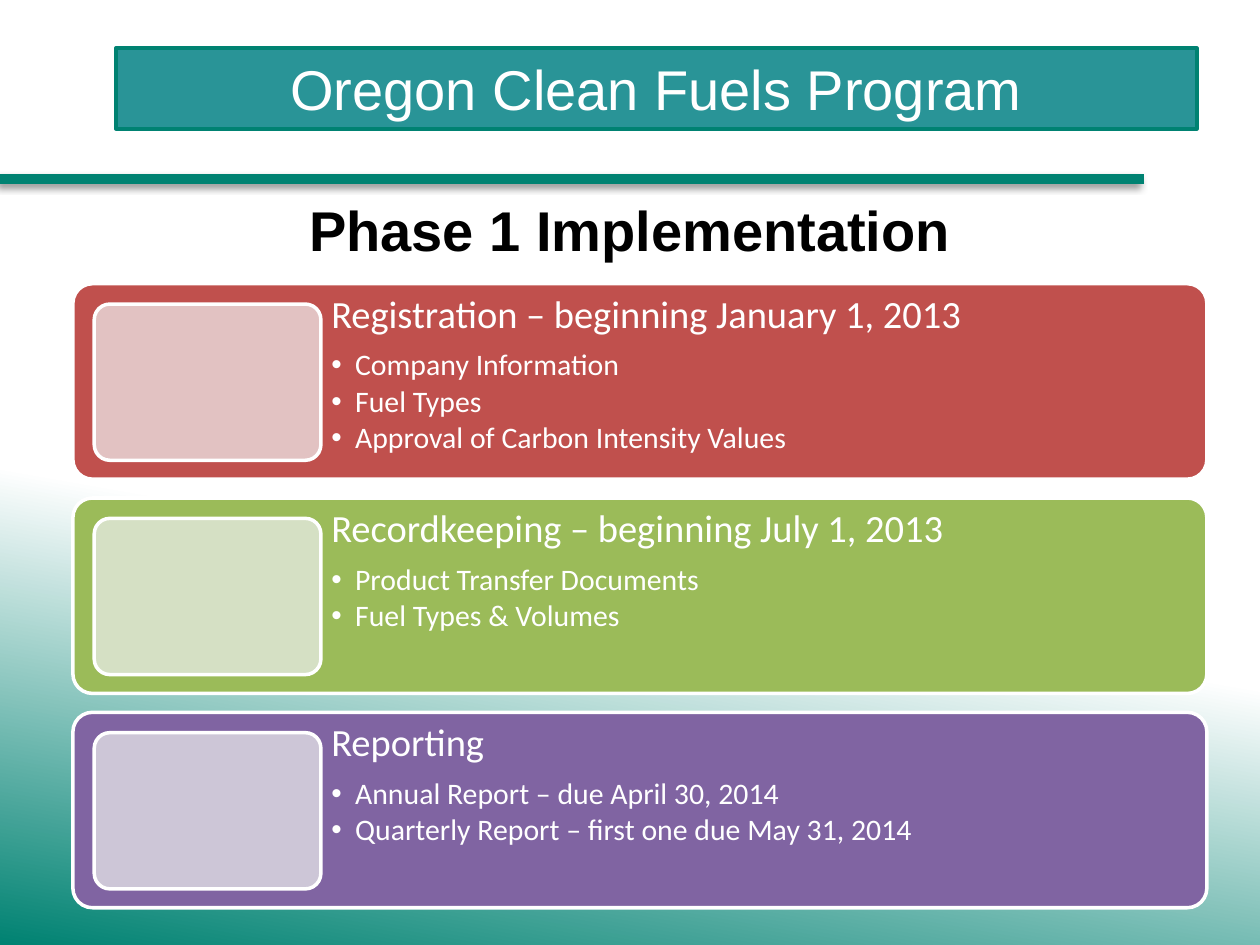
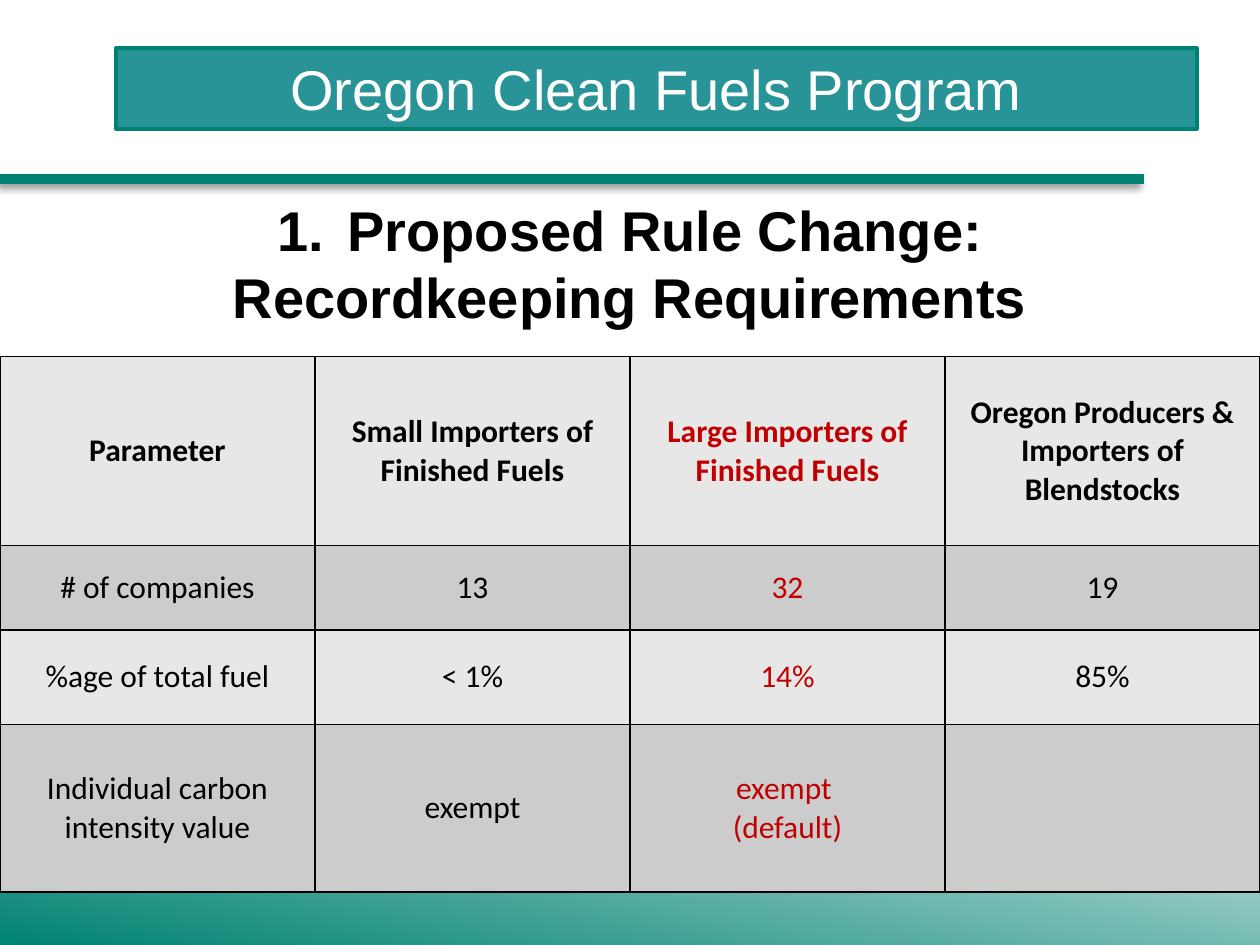
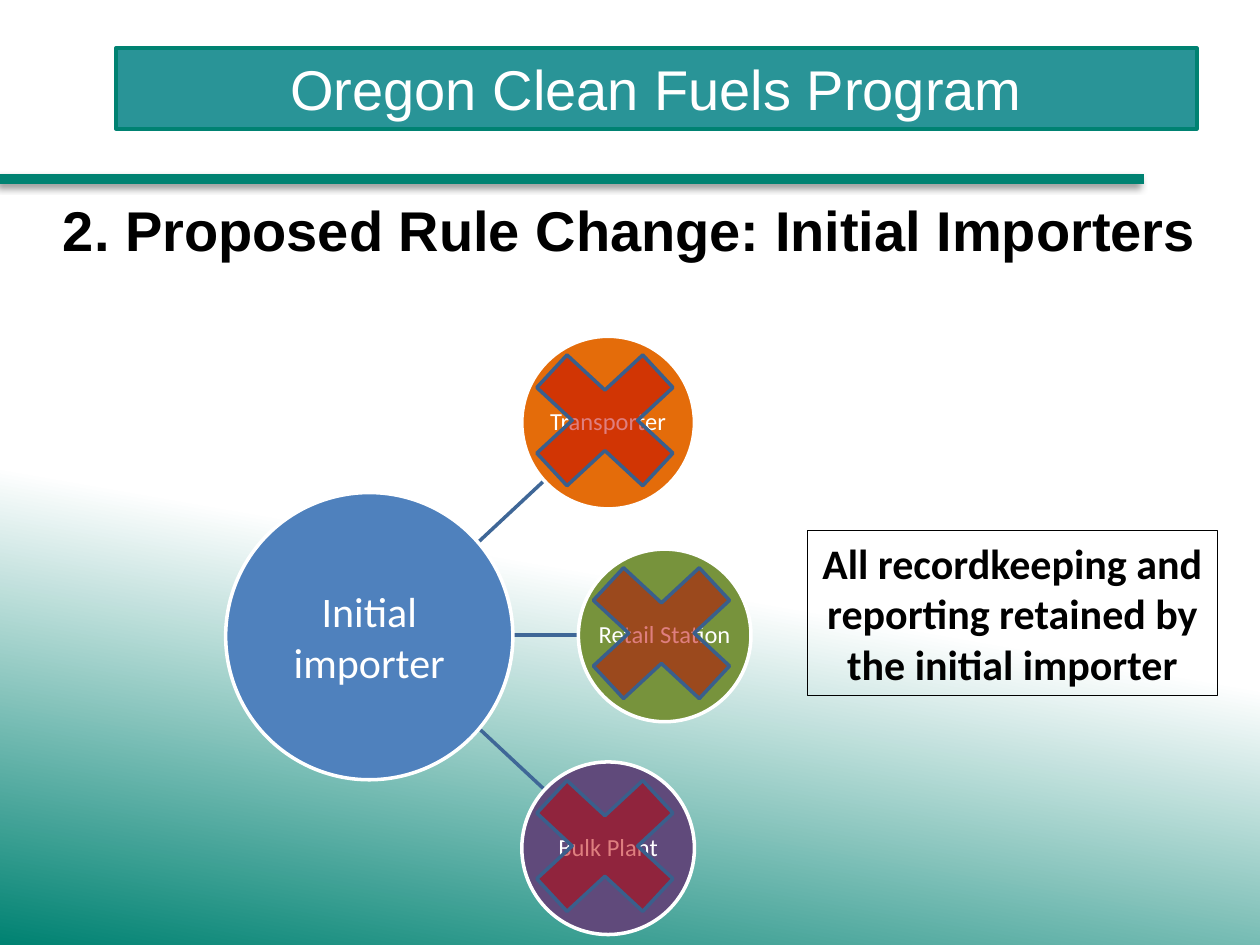
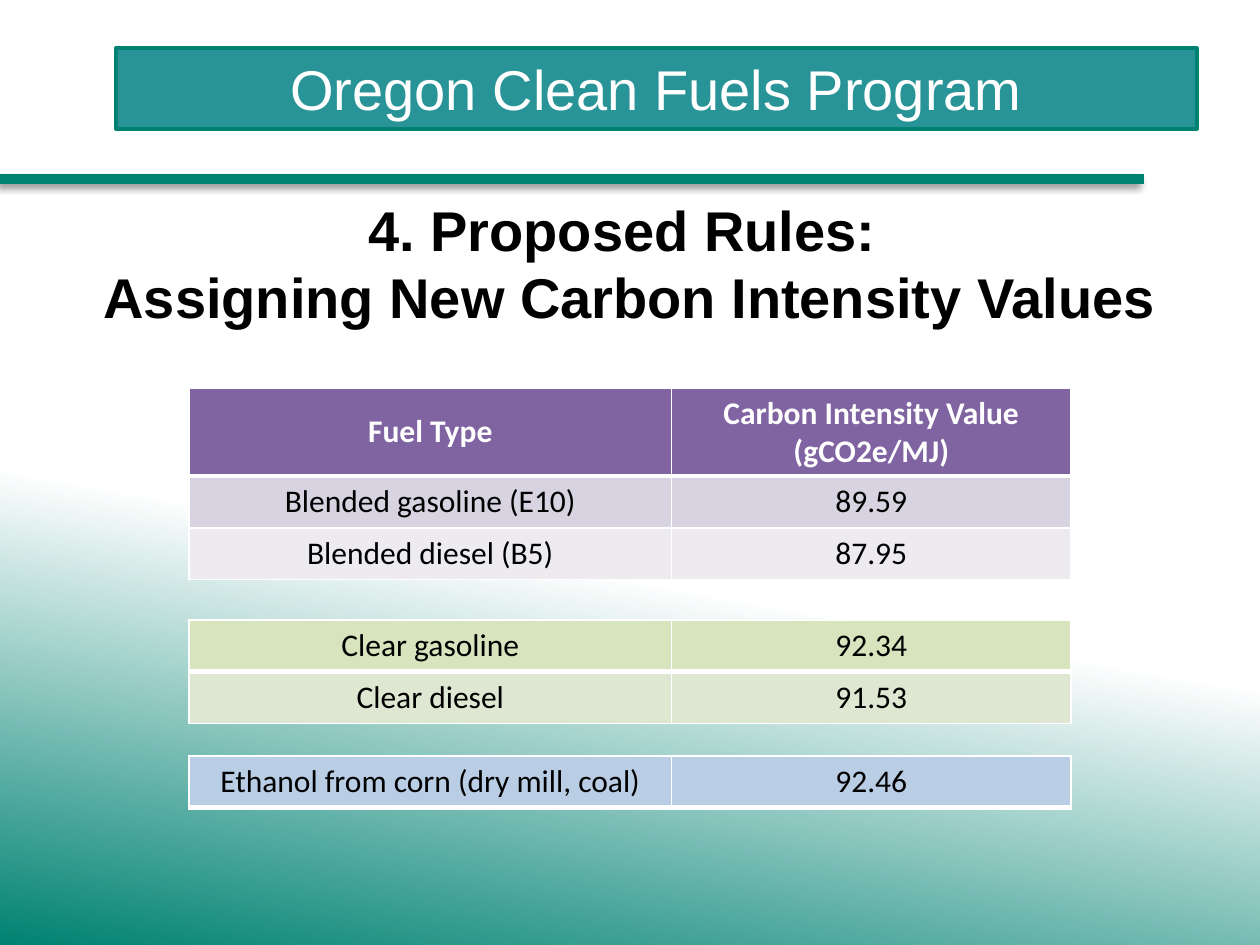
"""Build the four slides on the Oregon Clean Fuels Program."""
from lxml import etree
from pptx import Presentation
from pptx.dml.color import RGBColor
from pptx.enum.shapes import MSO_CONNECTOR, MSO_SHAPE
from pptx.enum.text import MSO_ANCHOR, PP_ALIGN
from pptx.oxml.ns import qn
from pptx.util import Cm, Pt

RECT = MSO_SHAPE.RECTANGLE
ROUNDED = MSO_SHAPE.ROUNDED_RECTANGLE
CIRCLE = MSO_SHAPE.OVAL
CROSS = MSO_SHAPE.MATH_MULTIPLY
STRAIGHT = MSO_CONNECTOR.STRAIGHT
LEFT, CENTER = PP_ALIGN.LEFT, PP_ALIGN.CENTER
TOP, MIDDLE = MSO_ANCHOR.TOP, MSO_ANCHOR.MIDDLE

SLIDE_W, SLIDE_H = 25.4, 19.05
WHITE, BLACK, RED = "FFFFFF", "000000", "C00000"
TEAL, BAND_TEAL, PURPLE = "008272", "299497", "8064A2"
LIGHT_GREY, MID_GREY = "E7E7E7", "CCCCCC"
TITLE_FONT, BODY_FONT = "Arial", "Calibri"
TITLE_STYLE = dict(size=32, font=TITLE_FONT)

CARDS = [
    ("C0504D", "E2C2C2", "Registration – beginning January 1, 2013",
     ["Company Information", "Fuel Types", "Approval of Carbon Intensity Values"]),
    ("9BBB59", "D5E0C4", "Recordkeeping – beginning July 1, 2013",
     ["Product Transfer Documents", "Fuel Types & Volumes"]),
    (PURPLE, "CDC6D7", "Reporting",
     ["Annual Report – due April 30, 2014",
      "Quarterly Report – first one due May 31, 2014"]),
]

IMPORTER_GROUPS = [
    (0, BLACK, [["Parameter", "Small Importers of Finished Fuels"],
                ["# of companies", "13"],
                ["%age of total fuel", "< 1%"],
                ["Individual carbon intensity value", "exempt"]]),
    (3, BLACK, [["Oregon Producers & Importers of Blendstocks"],
                ["19"], ["85%"], [""]]),
    (2, RED, [["Large Importers of Finished Fuels"],
              ["32"], ["14%"], ["exempt \n(default)"]]),
]

RECIPIENTS = [("Transporter", "E46C0A", 5.97), ("Retail Station", "77933C", 7.11),
              ("Bulk Plant", "604A7B", 5.97)]

FUEL_GROUPS = [
    (7.82, [1.75, 1.04, 1.04], [PURPLE, "D8D3E0", "EDEAF0"], True,
     [["Fuel Type", "Carbon Intensity Value\n(gCO2e/MJ)"],
      ["Blended gasoline (E10)", "89.59"],
      ["Blended diesel (B5)", "87.95"]]),
    (15.24, [1.04], ["B9CDE5"], False,
     [["Ethanol from corn (dry mill, coal)", "92.46"]]),
    (12.5, [1.04, 1.04], ["D7E4BD", "DEE7D1"], False,
     [["Clear gasoline", "92.34"], ["Clear diesel", "91.53"]]),
]


def rgb(value):
    """Turn a hex string into a colour."""
    return RGBColor.from_string(value)


def child(parent, tag, **attributes):
    """Append a DrawingML element and return it."""
    return etree.SubElement(parent, qn(tag), {k: str(v) for k, v in attributes.items()})


def set_alpha(element, percent):
    """Make the last plain colour inside an element translucent."""
    colour = list(element.iter(qn("a:srgbClr")))[-1]
    child(colour, "a:alpha", val=percent * 1000)


def write(frame, text, size=18, color=BLACK, bold=False, font=BODY_FONT, align=CENTER,
          spacing=None, after=None, bullet=None, indent=0):
    """Add text to a frame, one paragraph for each line."""
    for line in text.split("\n"):
        first = frame.paragraphs[0]
        paragraph = frame.add_paragraph() if first.runs else first
        paragraph.alignment = align
        if spacing:
            paragraph.line_spacing = spacing
        if after is not None:
            paragraph.space_after = Pt(after)
        properties = paragraph._p.get_or_add_pPr()
        if indent:
            properties.set("marL", str(Cm(indent)))
            properties.set("indent", str(-Cm(indent)))
        if bullet == "1.":
            child(properties, "a:buAutoNum", type="arabicPeriod")
        elif bullet:
            child(properties, "a:buFont", typeface=TITLE_FONT)
            child(properties, "a:buChar", char=bullet)
        run = paragraph.add_run()
        run.text = line
        run.font.name = font
        run.font.size = Pt(size)
        run.font.bold = bold
        run.font.color.rgb = rgb(color)


def add_frame(slide, left, top, width, height, margin=None):
    """Add a wrapping text box and return its frame."""
    frame = slide.shapes.add_textbox(Cm(left), Cm(top), Cm(width), Cm(height)).text_frame
    frame.word_wrap = True
    frame.vertical_anchor = TOP
    if margin is not None:
        set_margins(frame, margin)
    return frame


def set_margins(frame, margin):
    """Give a text frame the same margin on every side."""
    frame.margin_left = frame.margin_right = Cm(margin)
    frame.margin_top = frame.margin_bottom = Cm(margin)


def add_block(slide, kind, left, top, width, height, fill=None, line=WHITE, weight=2):
    """Add a flat preset shape."""
    block = slide.shapes.add_shape(kind, Cm(left), Cm(top), Cm(width), Cm(height))
    block.shadow.inherit = False
    if fill:
        block.fill.solid()
        block.fill.fore_color.rgb = rgb(fill)
    else:
        block.fill.background()
    block.line.color.rgb = rgb(line)
    block.line.width = Pt(weight)
    block.text_frame.word_wrap = True
    block.text_frame.vertical_anchor = MIDDLE
    return block


def add_rule(slide, x1, y1, x2, y2, color, weight):
    """Add a straight line and return its empty effect list."""
    rule = slide.shapes.add_connector(STRAIGHT, Cm(x1), Cm(y1), Cm(x2), Cm(y2))
    rule.line.color.rgb = rgb(color)
    rule.line.width = Pt(weight)
    return child(rule._element.spPr, "a:effectLst")


def add_grid(slide, left, top, widths, heights, rows):
    """Add a plain table and yield each cell with its row number and text."""
    table = slide.shapes.add_table(len(heights), len(widths), Cm(left), Cm(top),
                                   Cm(sum(widths)), Cm(sum(heights))).table
    table.first_row = table.horz_banding = False
    for column, width in zip(table.columns, widths):
        column.width = Cm(width)
    for number, (row, height, texts) in enumerate(zip(table.rows, heights, rows)):
        row.height = Cm(height)
        for cell, text in zip(row.cells, texts):
            yield cell, number, text


def fill_cell(cell, text, fill, border, top=1, bottom=1, **style):
    """Set the borders, the fill and the text of a cell."""
    properties = cell._tc.get_or_add_tcPr()
    for side, weight in zip("LRTB", (1, 1, top, bottom)):
        edge = child(properties, f"a:ln{side}", w=Pt(weight))
        child(child(edge, "a:solidFill"), "a:srgbClr", val=border)
    cell.fill.solid()
    cell.fill.fore_color.rgb = rgb(fill)
    cell.vertical_anchor = MIDDLE
    if text:
        write(cell.text_frame, text, **style)


def paint_background(master):
    """Give the master its white to teal gradient."""
    fill = master.background.fill
    fill.gradient()
    fill.gradient_angle = 260
    for stop, position, color in zip(fill.gradient_stops, (0.59, 1), (WHITE, TEAL)):
        stop.position = position
        stop.color.rgb = rgb(color)
    set_alpha(master._element.cSld.bg, 53)


def add_page(deck):
    """Add a blank slide with the program band and the rule below it."""
    slide = deck.slides.add_slide(deck.slide_layouts[6])
    effects = add_rule(slide, 0, 3.61, 23.06, 3.61, TEAL, 6)
    shadow = child(effects, "a:outerShdw", blurRad=Pt(4), dist=Pt(3), dir=135 * 60000,
                   rotWithShape=0)
    child(shadow, "a:srgbClr", val=BLACK)
    set_alpha(shadow, 40)
    band = add_block(slide, RECT, 2.34, 0.97, 21.79, 1.63, BAND_TEAL, TEAL)
    write(band.text_frame, "Oregon Clean Fuels Program", color=WHITE, **TITLE_STYLE)
    return slide


def add_heading(slide, height=1.63):
    """Add the heading box under the rule and return its frame."""
    return add_frame(slide, 0, 3.81, SLIDE_W, height)


def add_card(slide, left, top, fill, tint, title, points):
    """Draw one phase card with its tinted panel and bullets."""
    height = 3.94
    card = add_block(slide, ROUNDED, left, top, 22.86, height, fill)
    style = dict(color=WHITE, align=LEFT, spacing=0.9)
    frame = add_frame(slide, left + 4.98, top, 17.91, height, margin=0.23)
    write(frame, title, size=22, after=7.7, **style)
    write(frame, "\n".join(points), size=17, after=2.5, bullet="•", indent=0.48, **style)
    panel = add_block(slide, ROUNDED, left + 0.43, top + 0.41, 4.57, 3.15, tint)
    card.adjustments[0] = panel.adjustments[0] = 0.1


def build_phases(deck):
    """Build the slide of implementation phases."""
    slide = add_page(deck)
    for number, card in enumerate(CARDS):
        add_card(slide, 1.47, 5.72 + 4.32 * number, *card)
    write(add_heading(slide), "Phase 1 Implementation", bold=True, **TITLE_STYLE)


def build_recordkeeping(deck):
    """Build the slide that compares groups of importers."""
    slide = add_page(deck)
    heading = add_heading(slide, 3)
    style = dict(bold=True, indent=1.42, **TITLE_STYLE)
    write(heading, "Proposed Rule Change:", bullet="1.", **style)
    write(heading, "Recordkeeping Requirements", **style)
    column = SLIDE_W / 4
    for position, color, rows in IMPORTER_GROUPS:
        grid = add_grid(slide, position * column, 7.19, [column] * len(rows[0]),
                        [3.81, 1.7, 1.9, 3.38], rows)
        for cell, number, text in grid:
            fill_cell(cell, text, (LIGHT_GREY, MID_GREY)[number % 2], BLACK,
                      color=color, bold=number == 0)


def add_importer_diagram(slide, left, top):
    """Draw the importer hub, its recipients and the crosses over them."""
    middle = top + 6.02
    for side, end in zip((-1, 0, 1), (6.42, 7.11, 6.42)):
        add_rule(slide, left + 5.08, middle + 1.86 * side,
                 left + end, middle + 3.11 * side, "3F6797", 2)
    hub = add_block(slide, CIRCLE, left, top + 3.15, 5.79, 5.79, "4F81BD")
    write(hub.text_frame, "Initial importer", size=24, color=WHITE)
    spots = [(left + x, top + 4.29 * i) for i, (_, _, x) in enumerate(RECIPIENTS)]
    for (name, fill, _), (x, y) in zip(RECIPIENTS, spots):
        recipient = add_block(slide, CIRCLE, x, y, 3.48, 3.48, fill)
        recipient.text_frame.word_wrap = False
        set_margins(recipient.text_frame, 0.03)
        write(recipient.text_frame, name, size=14, color=WHITE, spacing=0.9)
    for x, y in spots:
        cross = add_block(slide, CROSS, x - 0.38, y - 0.21, 4.11, 3.81, RED, "3A5F8C")
        set_alpha(cross._element.spPr.find(qn("a:solidFill")), 50)


def build_importers(deck):
    """Build the slide on initial importers."""
    slide = add_page(deck)
    write(add_heading(slide), "2. Proposed Rule Change: Initial Importers",
          bold=True, **TITLE_STYLE)
    add_importer_diagram(slide, 4.55, 6.78)
    duty = add_block(slide, RECT, 16.28, 10.69, 8.26, 3.33, line=BLACK, weight=0.75)
    write(duty.text_frame, "All recordkeeping and reporting retained by the initial importer",
          size=24, bold=True)


def build_intensity(deck):
    """Build the slide of carbon intensity values."""
    slide = add_page(deck)
    write(add_heading(slide, 3), "4. Proposed Rules: \nAssigning New Carbon Intensity Values",
          bold=True, **TITLE_STYLE)
    for top, heights, fills, titled, rows in FUEL_GROUPS:
        for cell, number, text in add_grid(slide, 3.81, top, [9.73, 8.05], heights, rows):
            header = titled and number == 0
            fill_cell(cell, text, fills[number], WHITE,
                      top=3 if number == 1 else 1, bottom=3 if number == 0 else 1,
                      color=WHITE if header else BLACK, bold=header)


def main():
    """Build and save the presentation."""
    deck = Presentation()
    deck.slide_width, deck.slide_height = Cm(SLIDE_W), Cm(SLIDE_H)
    paint_background(deck.slide_master)
    build_phases(deck)
    build_recordkeeping(deck)
    build_importers(deck)
    build_intensity(deck)
    deck.save("out.pptx")


if __name__ == "__main__":
    main()
